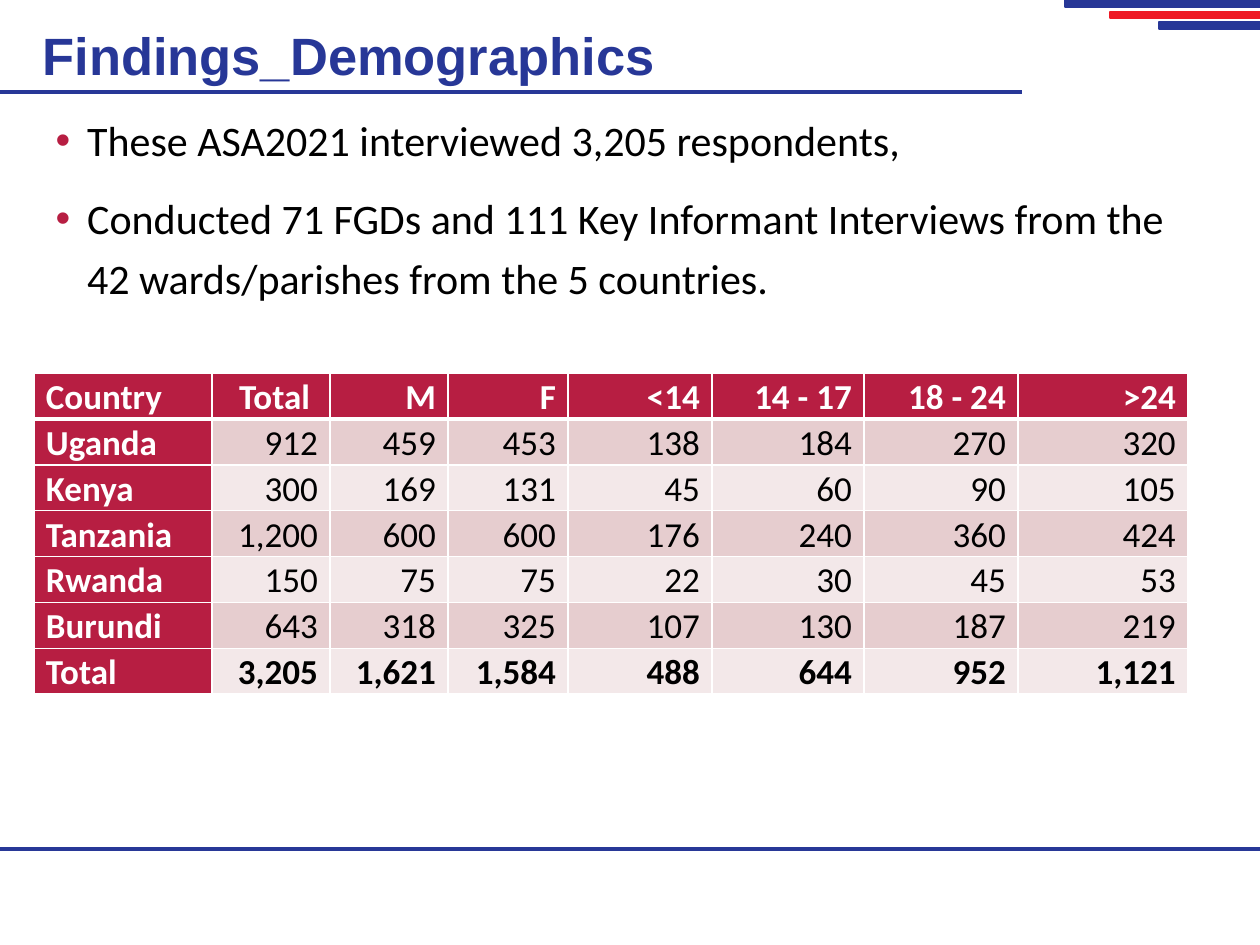
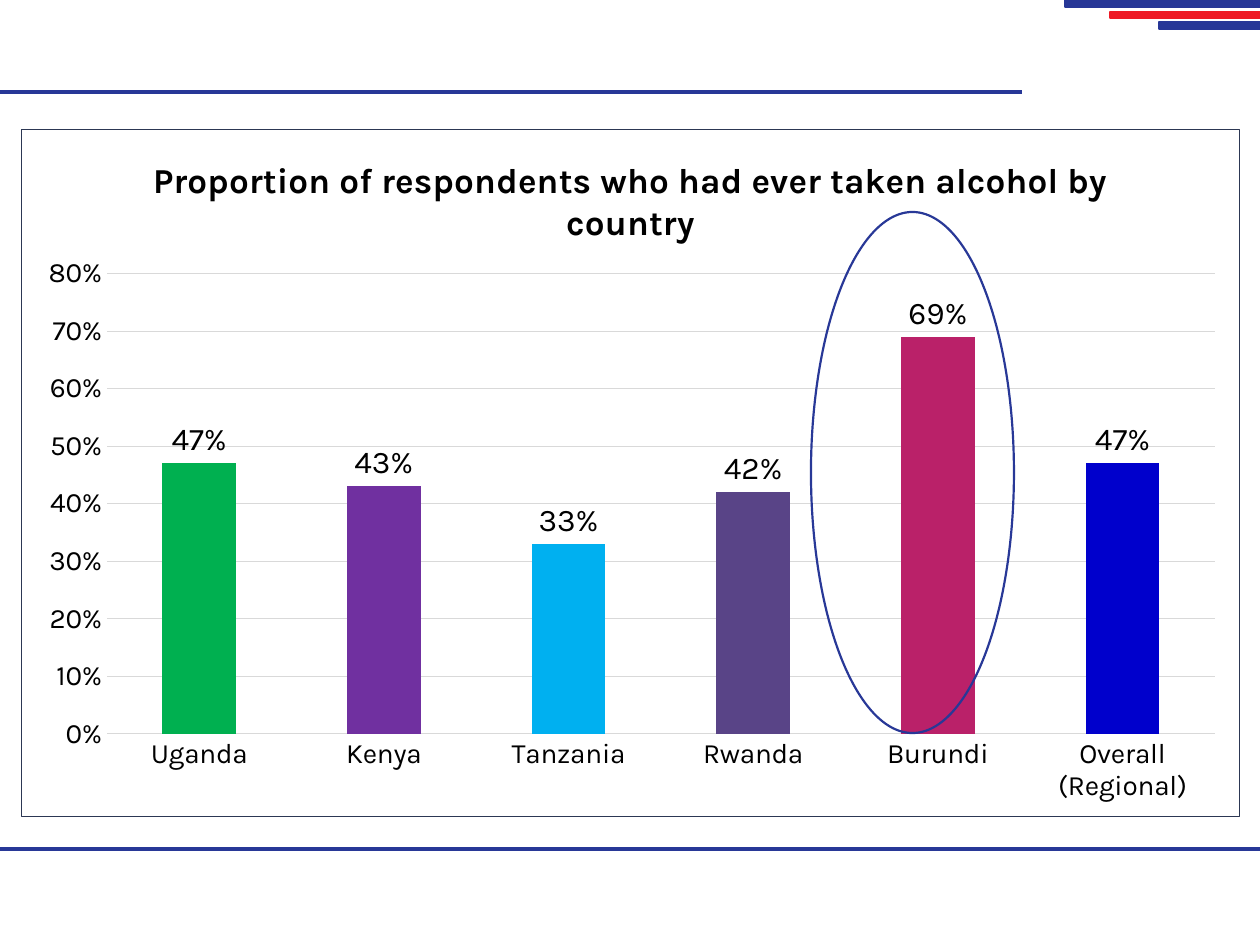
from lxml.etree import SubElement
from pptx import Presentation
from pptx.chart.data import CategoryChartData
from pptx.dml.color import RGBColor
from pptx.enum.chart import XL_CHART_TYPE, XL_LABEL_POSITION, XL_TICK_MARK
from pptx.enum.shapes import MSO_CONNECTOR, MSO_SHAPE
from pptx.enum.text import MSO_ANCHOR, MSO_AUTO_SIZE, PP_ALIGN
from pptx.oxml import parse_xml
from pptx.oxml.ns import nsdecls, qn
from pptx.util import Pt

PX = 914400 / 126  # EMU in one px

NAVY = RGBColor(0x27, 0x37, 0x97)
FOOTER_NAVY = RGBColor(0x28, 0x38, 0x97)
RED = RGBColor(0xEE, 0x1A, 0x26)
CRIMSON = RGBColor(0xB7, 0x1E, 0x42)
BAND_DARK = RGBColor(0xE6, 0xCD, 0xCF)
BAND_LIGHT = RGBColor(0xF3, 0xE8, 0xE9)
BLACK = RGBColor(0, 0, 0)
WHITE = RGBColor(0xFF, 0xFF, 0xFF)
GRID_GREY = RGBColor(0xD9, 0xD9, 0xD9)
FRAME_SLATE = RGBColor(0x2C, 0x37, 0x53)
BAR_COLOURS = [
    RGBColor(0x00, 0xB0, 0x50),
    RGBColor(0x70, 0x30, 0xA0),
    RGBColor(0x00, 0xB0, 0xF0),
    RGBColor(0x59, 0x44, 0x87),
    RGBColor(0xBA, 0x21, 0x69),
    RGBColor(0x00, 0x00, 0xCC),
]


def px(*lengths):
    return [round(length * PX) for length in lengths]


def style_font(font, name, size, colour, bold=False):
    font.name = name
    font.size = Pt(size)
    font.bold = bold
    font.color.rgb = colour


presentation = Presentation()
presentation.slide_width, presentation.slide_height = px(1260, 945)
demographics = presentation.slides.add_slide(presentation.slide_layouts[1])
alcohol = presentation.slides.add_slide(presentation.slide_layouts[6])

# Rules and corner stripes shared by both slides
for slide in (demographics, alcohol):
    for right, y, colour, width in ((1022, 92, NAVY, 2.5),
                                    (1260, 849, FOOTER_NAVY, 2.25)):
        rule = slide.shapes.add_connector(MSO_CONNECTOR.STRAIGHT, *px(-4, y, right, y))
        rule.line.color.rgb = colour
        rule.line.width = Pt(width)
        SubElement(rule._element.spPr, qn("a:effectLst"))
    for left, top, height, colour in ((1065, 0, 7, NAVY), (1110, 12, 6, RED),
                                      (1159, 22, 7, NAVY)):
        stripe = slide.shapes.add_shape(
            MSO_SHAPE.RECTANGLE, *px(left, top, 1260 - left, height))
        stripe.shadow.inherit = False
        stripe.fill.solid()
        stripe.fill.fore_color.rgb = colour
        stripe.line.color.rgb = colour
        stripe.line.width = Pt(1.25)

# Slide 1: title
title = demographics.shapes.title
title.left, title.top, title.width, title.height = px(30, 20, 1026, 78)
title.text_frame.auto_size = MSO_AUTO_SIZE.NONE
title.text_frame.vertical_anchor = MSO_ANCHOR.MIDDLE
paragraph = title.text_frame.paragraphs[0]
paragraph.alignment = PP_ALIGN.LEFT
paragraph.line_spacing = 0.9
run = paragraph.add_run()
run.text = "Findings_Demographics"
style_font(run.font, "Arial", 30, NAVY, True)

# Slide 1: bullets
body = demographics.placeholders[1]
body.left, body.top, body.width, body.height = px(43, 98, 1135, 324)
body.text_frame.auto_size = MSO_AUTO_SIZE.NONE
bullets = [
    "These ASA2021 interviewed 3,205 respondents,",
    "Conducted 71 FGDs and 111 Key Informant Interviews from the "
    "42 wards/parishes from the 5 countries.",
]
for index, text in enumerate(bullets):
    paragraph = body.text_frame.paragraphs[0] if index == 0 else body.text_frame.add_paragraph()
    paragraph.line_spacing = 1.2
    paragraph.space_before = Pt(10 if index else 0)
    properties = paragraph._p.get_or_add_pPr()
    properties.set("marL", "228600")
    properties.set("indent", "-228600")
    bullet_colour = SubElement(properties, qn("a:buClr"))
    SubElement(bullet_colour, qn("a:srgbClr")).set("val", str(CRIMSON))
    SubElement(properties, qn("a:buFont")).set("typeface", "Arial")
    SubElement(properties, qn("a:buChar")).set("char", "•")
    run = paragraph.add_run()
    run.text = text
    style_font(run.font, "Calibri", 24, BLACK)

# Slide 1: respondents by country, sex and age
respondents = [
    ["Country", "Total ", "M", "F", "<14", "14 - 17", "18 - 24", ">24"],
    ["Uganda", "912", "459", "453", "138", "184", "270", "320"],
    ["Kenya", "300", "169", "131", "45", "60", "90", "105"],
    ["Tanzania", "1,200", "600", "600", "176", "240", "360", "424"],
    ["Rwanda", "150", "75", "75", "22", "30", "45", "53"],
    ["Burundi", "643", "318", "325", "107", "130", "187", "219"],
    ["Total", "3,205", "1,621", "1,584", "488", "644", "952", "1,121"],
]
column_widths = px(178, 118, 118, 120, 144, 152, 154, 170)
last_row = len(respondents) - 1
table = demographics.shapes.add_table(
    len(respondents), len(column_widths), *px(34, 373, 1154, 301)).table
for column, width in zip(table.columns, column_widths):
    column.width = width
for row_index, row in enumerate(respondents):
    for column_index, text in enumerate(row):
        heading = row_index == 0 or column_index == 0
        cell = table.cell(row_index, column_index)
        cell.vertical_anchor = MSO_ANCHOR.MIDDLE
        cell.margin_left = cell.margin_right = px(12)[0]
        cell.margin_top = cell.margin_bottom = 0
        for side in ("lnL", "lnR", "lnT", "lnB"):
            under_header = (row_index, side) in ((0, "lnB"), (1, "lnT"))
            border = SubElement(cell._tc.get_or_add_tcPr(), qn("a:" + side))
            border.set("w", str(Pt(3 if under_header else 1)))
            border_fill = SubElement(border, qn("a:solidFill"))
            SubElement(border_fill, qn("a:srgbClr")).set("val", str(WHITE))
        cell.fill.solid()
        band = BAND_DARK if row_index % 2 else BAND_LIGHT
        cell.fill.fore_color.rgb = CRIMSON if heading else band
        paragraph = cell.text_frame.paragraphs[0]
        paragraph.alignment = PP_ALIGN.RIGHT if column_index else PP_ALIGN.LEFT
        paragraph.line_spacing = 1.07
        paragraph.space_after = Pt(8)
        run = paragraph.add_run()
        run.text = text
        style_font(run.font, "Calibri", 20, WHITE if heading else BLACK,
                   heading or row_index == last_row)

# Slide 2: column chart
chart_data = CategoryChartData(number_format="0%")
chart_data.categories = ["Uganda", "Kenya", "Tanzania", "Rwanda", "Burundi",
                         "Overall (Regional)"]
chart_data.add_series("Series 1", [0.47, 0.43, 0.33, 0.42, 0.69, 0.47])
chart = alcohol.shapes.add_chart(
    XL_CHART_TYPE.COLUMN_CLUSTERED, *px(21, 129, 1219, 688), chart_data).chart
chart.has_legend = False
style_font(chart.font, "Calibri", 10, BLACK)
chart.has_title = True
run = chart.chart_title.text_frame.paragraphs[0].add_run()
run.text = "Proportion of respondents who had ever taken alcohol by country"
style_font(run.font, "Karla", 20, BLACK, True)
chart.chart_title.include_in_layout = False

# Chart frame and plot area position
chart._chartSpace.chart.addnext(parse_xml(
    f'<c:spPr {nsdecls("c", "a")}>'
    f'<a:solidFill><a:srgbClr val="{WHITE}"/></a:solidFill>'
    f'<a:ln w="{Pt(0.75)}"><a:solidFill><a:srgbClr val="{FRAME_SLATE}"/></a:solidFill></a:ln>'
    '</c:spPr>'))
plot_area = chart._chartSpace.chart.plotArea
for old_layout in plot_area.findall(qn("c:layout")):
    plot_area.remove(old_layout)
plot_area.insert(0, parse_xml(
    f'<c:layout {nsdecls("c")}><c:manualLayout><c:layoutTarget val="inner"/>'
    '<c:xMode val="edge"/><c:yMode val="edge"/>'
    '<c:x val="0.07"/><c:y val="0.21"/><c:w val="0.91"/><c:h val="0.67"/>'
    '</c:manualLayout></c:layout>'))

# Axes
for axis in (chart.category_axis, chart.value_axis):
    axis.major_tick_mark = axis.minor_tick_mark = XL_TICK_MARK.NONE
    axis.format.line.fill.background()
    style_font(axis.tick_labels.font, "Karla", 16, BLACK)
value_axis = chart.value_axis
value_axis.minimum_scale, value_axis.maximum_scale = 0, 0.8
value_axis.major_unit = 0.1
value_axis.tick_labels.number_format = "0%"
value_axis.tick_labels.number_format_is_linked = False
value_axis.major_gridlines.format.line.color.rgb = GRID_GREY
value_axis.major_gridlines.format.line.width = Pt(0.75)

# Bars and their labels
plot = chart.plots[0]
plot.gap_width = 150
plot.vary_by_categories = False
for index, colour in enumerate(BAR_COLOURS):
    bar_fill = plot.series[0].points[index].format.fill
    bar_fill.solid()
    bar_fill.fore_color.rgb = colour
plot.has_data_labels = True
labels = plot.data_labels
labels.show_value = True
labels.position = XL_LABEL_POSITION.OUTSIDE_END
labels.number_format = "0%"
labels.number_format_is_linked = False
style_font(labels.font, "Karla", 18, BLACK)

# Ring around the highest bar
ring = alcohol.shapes.add_shape(MSO_SHAPE.OVAL, *px(811, 212, 203, 521))
ring.shadow.inherit = False
ring.fill.background()
ring.line.color.rgb = FOOTER_NAVY
ring.line.width = Pt(1.25)

presentation.save("out.pptx")
